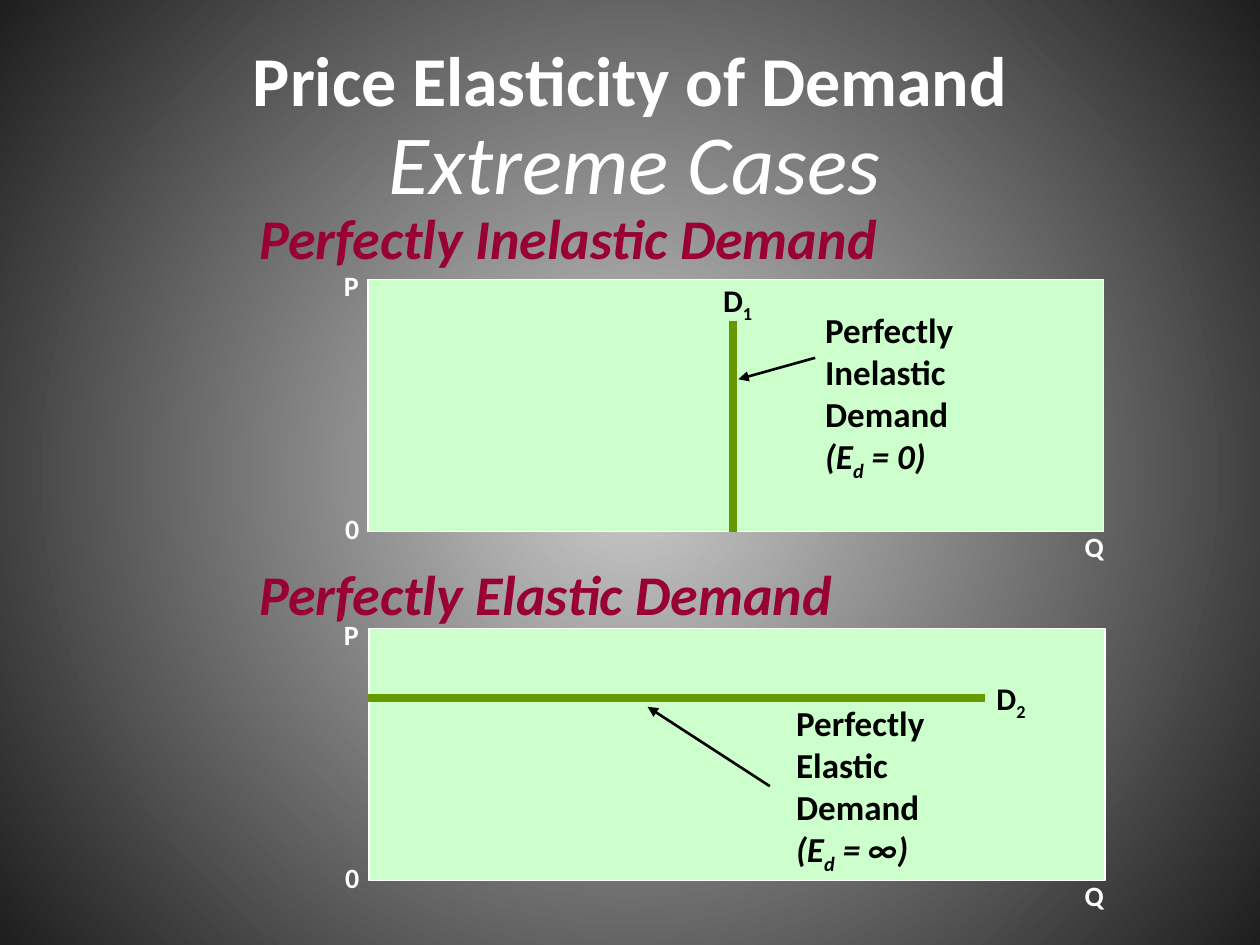
"""Build a slide on the two extreme cases of price elasticity of demand."""
from lxml import etree
from pptx import Presentation, util as u
from pptx.dml.color import RGBColor
from pptx.enum import shapes, text
from pptx.oxml import ns

WHITE = RGBColor(255, 255, 255)
BLACK = RGBColor(0, 0, 0)
WINE = RGBColor(0x99, 0, 0x33)
MINT = RGBColor(0xCC, 0xFF, 0xCC)
GREEN = RGBColor(0x66, 0x99, 0)
SILVER = RGBColor(0xCC, 0xCC, 0xCC)
COAL = RGBColor(0x1E, 0x1E, 0x1E)


class Deck:
    """Hold the style and the slide, on a grid of 100 columns by 75 rows."""

    face = "Calibri"

    def __init__(self):
        self.prs = Presentation()
        self.prs.slide_width, self.prs.slide_height = u.Inches(10), u.Inches(7.5)
        self.slide = self.prs.slides.add_slide(self.prs.slide_layouts[1])

    def grid(self, *cells):
        """Turn column and row counts into lengths, in x, y order."""
        units = self.prs.slide_width / 100, self.prs.slide_height / 75
        return [round(n * units[i % 2]) for i, n in enumerate(cells)]

    def glow(self, inner, outer):
        """Fill the background with a round gradient."""
        fill = self.slide.background.fill
        fill.gradient()
        for stop, color in zip(fill.gradient_stops, (inner, outer)):
            stop.color.rgb = color
        grad = self.slide.element.xpath(".//p:bg//a:gradFill")[0]
        grad.remove(grad.find(ns.qn("a:lin")))
        path = etree.SubElement(grad, ns.qn("a:path"), path="circle")
        sides = dict.fromkeys("ltrb", "50000")
        etree.SubElement(path, ns.qn("a:fillToRect"), **sides)

    def style(self, para, size, color, bold=True, slant=False):
        """Set the font of a paragraph."""
        font = para.font
        font.name, font.size, font.color.rgb = self.face, u.Pt(size), color
        font.bold, font.italic = bold, slant

    def holder(self, index, box, words, size, **look):
        """Place and fill a template placeholder."""
        shape = self.slide.placeholders[index]
        shape.left, shape.top, shape.width, shape.height = self.grid(*box)
        frame = shape.text_frame
        frame.text, frame.auto_size = words, text.MSO_AUTO_SIZE.NONE
        para = frame.paragraphs[0]
        self.style(para, size, WHITE, **look)
        return para

    def title(self, box, words):
        """Write the centred title."""
        para = self.holder(0, box, words, 40)
        para.alignment = text.PP_ALIGN.CENTER

    def body(self, box, words):
        """Write the subtitle without a bullet."""
        para = self.holder(1, box, words, 48, bold=False, slant=True)
        para.space_before = u.Pt(0)
        props = para._p.get_or_add_pPr()
        props.set("marL", str(u.Inches(0.38)))
        props.set("indent", str(u.Inches(-0.38)))
        bare = etree.Element(ns.qn("a:buNone"))
        props.find(ns.qn("a:spcBef")).addnext(bare)

    def label(self, box, lines, size, color, slant=False, host=None):
        """Write lines of text; parts between underscores are subscripts."""
        frame = (host or self.slide).shapes.add_textbox(*self.grid(*box)).text_frame
        frame.word_wrap = False
        frame.auto_size = text.MSO_AUTO_SIZE.SHAPE_TO_FIT_TEXT
        for i, line in enumerate(lines):
            para = frame.add_paragraph() if i else frame.paragraphs[0]
            self.style(para, size, color, slant=slant or line.startswith("("))
            for j, part in enumerate(line.split("_")):
                run = para.add_run()
                run.text = part
                if j % 2:
                    run._r.get_or_add_rPr().set("baseline", "-25000")

    def plot(self, left, top):
        """Draw an empty graph with its axis labels as one group."""
        group = self.slide.shapes.add_group_shape()
        rect = group.shapes.add_shape(
            shapes.MSO_SHAPE.RECTANGLE, *self.grid(left, top, 58.4, 20))
        rect.shadow.inherit = False
        rect.fill.solid()
        rect.fill.fore_color.rgb = MINT
        rect.line.color.rgb, rect.line.width = WHITE, u.Pt(0.75)
        for mark, col, row, wide in (("P", 26.3, -1.4, 3.5), ("0", 26.4, 17.9, 3.2),
                                     ("Q", 85.1, 19.3, 3.8)):
            self.label((col, top + row, wide, 3.7), [mark], 16, WHITE, host=group)

    def line(self, ends, color, width, arrow=False):
        """Draw a straight line, with an arrowhead at its end if asked."""
        link = self.slide.shapes.add_connector(
            shapes.MSO_CONNECTOR.STRAIGHT, *self.grid(*ends))
        link.line.color.rgb, link.line.width = color, u.Pt(width)
        if arrow:
            etree.SubElement(link.line._get_or_add_ln(), ns.qn("a:tailEnd"),
                             type="triangle")
        etree.SubElement(link._element.spPr, ns.qn("a:effectLst"))


def main():
    """Build and save the slide."""
    deck = Deck()
    deck.glow(SILVER, COAL)
    deck.title((5, 0, 90, 12.5), "Price Elasticity of Demand")
    deck.body((29.8, 8.3, 66.9, 8.9), "Extreme Cases")
    cases = (
        ("Inelastic", "0", (15.7, 58.5), (29.2, 22.2), (58.2, 25.5, 58.2, 42.2),
         ("D_1", 56.4, 21.8), (64.5, 24), (64.7, 28.4, 58.6, 30.1)),
        ("Elastic", "∞", (43.9, 55.1), (29.3, 49.9), (29.2, 55.4, 78.2, 55.4),
         ("D_2", 78.1, 53.4), (62.2, 55.2), (61.1, 62.4, 51.4, 56.1)),
    )
    for kind, value, (row, wide), plot, curve, (name, *spot), note, arrow in cases:
        deck.label((19.6, row, wide, 6.3), [f"Perfectly {kind} Demand"], 32, WINE,
                   slant=True)
        deck.plot(*plot)
        deck.line(curve, GREEN, 4.5)
        deck.label((*spot, 4.5, 4), [name], 18, BLACK)
        deck.label((*note, 12.3, 14.5),
                   ["Perfectly", kind, "Demand", f"(E_d_ = {value})"], 20, BLACK)
        deck.line(arrow, BLACK, 1.5, arrow=True)
    deck.prs.save("out.pptx")


if __name__ == "__main__":
    main()
